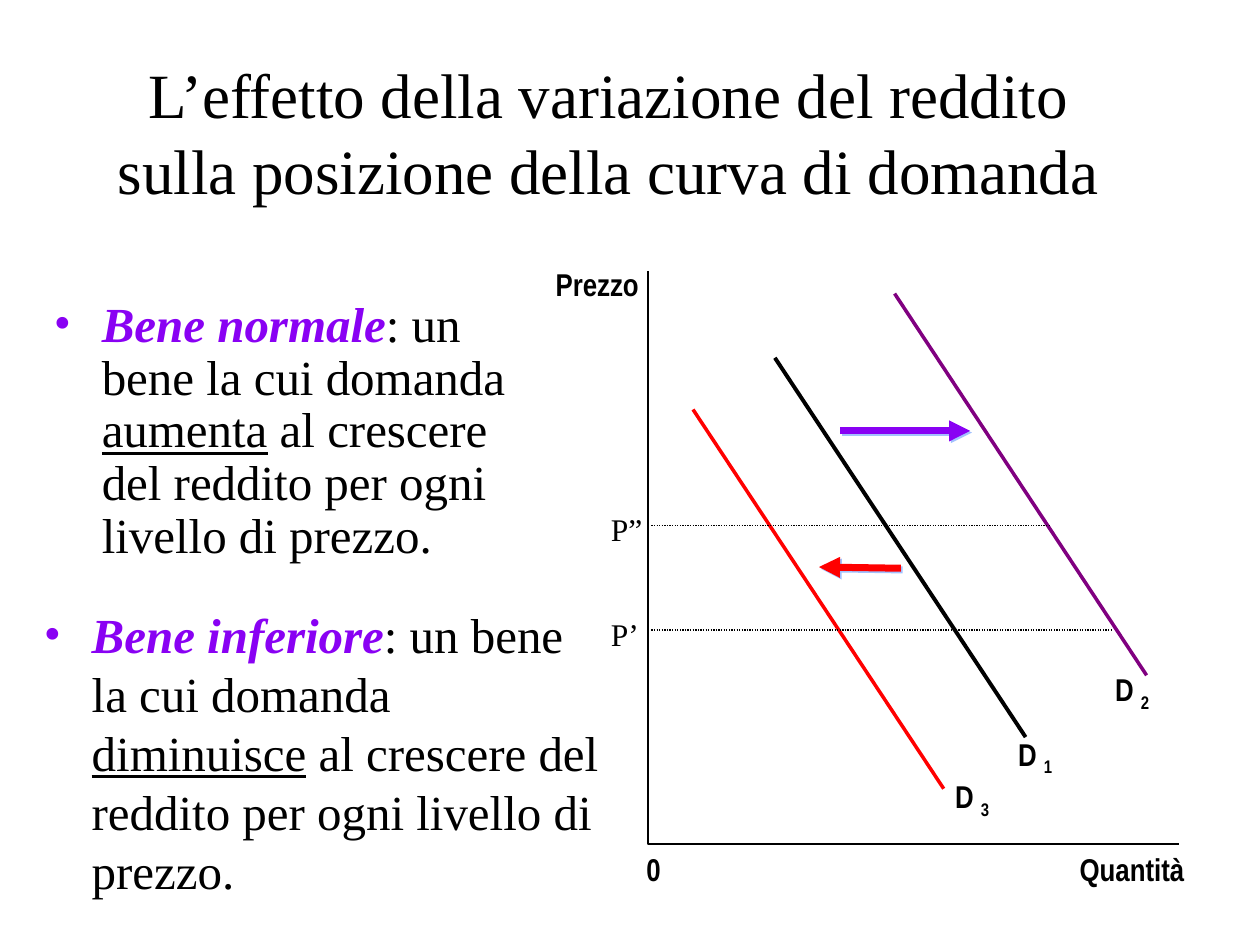
from lxml import etree
from pptx import Presentation, util as u
from pptx.dml.color import RGBColor
from pptx.enum import dml, shapes, text
from pptx.oxml.ns import qn

SERIF, SANS = "Times New Roman", "Arial Narrow"
BLACK, VIOLET, PURPLE, RED = "000000", "8901F3", "800080", "FF0000"
GLOW = "A2C1FE"
LEFT, MID, RIGHT = text.PP_ALIGN.LEFT, text.PP_ALIGN.CENTER, text.PP_ALIGN.RIGHT
PAD = (0.1, 0.05)

TITLE = "L’effetto della variazione del reddito sulla posizione della curva di domanda"
GOODS = [
    ((0.33, 2.33, 4.17, 2.08), 0.9, "Bene normale", "aumenta"),
    ((0.25, 4.75, 4.67, 2.42), None, "Bene inferiore", "diminuisce"),
]
AXES = [(5.14, 2.15), (5.14, 6.7), (9.36, 6.7)]
NAMES = [
    ("Prezzo", (4.35, 2.1, 0.72, 0.6), RIGHT),
    ("Quantità", (8.5, 6.75, 0.9, 0.3), RIGHT),
    ("0", (5.13, 6.75, 0.15, 0.3), LEFT),
]
CURVES = [
    ("1", (8.14, 5.85), (6.15, 2.84), BLACK, 2.25, (8.08, 5.83)),
    ("2", (9.1, 5.36), (7.1, 2.33), PURPLE, 2, (8.85, 5.32)),
    ("3", (7.49, 6.26), (5.5, 3.25), RED, 2, (7.58, 6.17)),
]
SHIFTS = [((6.67, 3.42), (7.7, 3.42), VIOLET), ((7.15, 4.51), (6.5, 4.5), RED)]
PRICES = [("P”", 4.17, 8.33, 0.5), ("P’", 5, 8.83, 0.42)]

deck = Presentation()
deck.slide_width, deck.slide_height = u.Inches(10), u.Inches(7.5)
slide = deck.slides.add_slide(deck.slide_layouts[6])


def paint(hue):
    return RGBColor.from_string(hue)


def node(top, tag, **attrs):
    return etree.SubElement(top, qn("a:" + tag), attrs)


def write(runs, box, size=18, font=SANS, align=LEFT, pad=(0, 0), wrap=False,
          mid=False, lead=None, bullet=False):
    frame = slide.shapes.add_textbox(*map(u.Inches, box)).text_frame
    frame.word_wrap = wrap
    frame.margin_left = frame.margin_right = u.Inches(pad[0])
    frame.margin_top = frame.margin_bottom = u.Inches(pad[1])
    frame.vertical_anchor = text.MSO_ANCHOR.MIDDLE if mid else text.MSO_ANCHOR.TOP
    para = frame.paragraphs[0]
    para.alignment = align
    if lead:
        para.line_spacing = lead
    if bullet:
        para.space_before = u.Pt(size * 0.2)
        props = para._p.get_or_add_pPr()
        props.set("marL", str(u.Inches(0.38)))
        props.set("indent", str(-u.Inches(0.38)))
        node(props, "buFont", typeface=font)
        node(props, "buChar", char="•")
    for words, look in runs:
        run = para.add_run()
        run.text = words
        face = run.font
        face.size, face.name = u.Pt(size), font
        face.color.rgb = paint(look.get("hue", BLACK))
        face.bold, face.italic = look.get("bold", False), look.get("slant", False)
        face.underline = look.get("under", False)
        if "base" in look:
            face._element.set("baseline", str(look["base"] * 1000))


def draw(start, end, hue, width, dots=False, arrow=False):
    line = slide.shapes.add_connector(
        shapes.MSO_CONNECTOR.STRAIGHT, *map(u.Inches, start + end))
    line.line.color.rgb, line.line.width = paint(hue), u.Pt(width)
    if dots:
        line.line.dash_style = dml.MSO_LINE.ROUND_DOT
    if arrow:
        node(line.line._get_or_add_ln(), "tailEnd", type="triangle")
    fx = node(line._element.spPr, "effectLst")
    if arrow:
        shade = node(fx, "outerShdw", blurRad="0", dist=str(u.Pt(1.4)),
                     dir=str(45 * 60000), algn="ctr", rotWithShape="0")
        node(shade, "srgbClr", val=GLOW)


write([(TITLE, {})], (0.58, 0.33, 8.5, 1.42), 36, SERIF, MID, PAD, True, True)

for box, lead, good, verb in GOODS:
    runs = [
        (good, dict(hue=VIOLET, bold=True, slant=True)),
        (": un bene la cui domanda ", {}),
        (verb, dict(under=True)),
        (" al crescere del reddito per ogni livello di prezzo.", {}),
    ]
    write(runs, box, 28, SERIF, pad=PAD, wrap=True, lead=lead, bullet=True)

pen = slide.shapes.build_freeform(*map(u.Inches, AXES[0]))
pen.add_line_segments([tuple(map(u.Inches, spot)) for spot in AXES[1:]], close=False)
axes = pen.convert_to_shape()
axes.shadow.inherit = False
axes.fill.background()
axes.line.color.rgb, axes.line.width = paint(BLACK), u.Pt(1)

for name, box, align in NAMES:
    write([(name, dict(bold=True))], box, align=align)

for num, start, end, hue, width, spot in CURVES:
    draw(start, end, hue, width)
    write([("D ", dict(bold=True)), (num, dict(bold=True, base=-25))],
          spot + (0.28, 0.3))

for start, end, hue in SHIFTS:
    draw(start, end, hue, 4, arrow=True)

for name, y, end, width in PRICES:
    draw((5.17, y), (end, y), BLACK, 0.75, dots=True)
    write([(name, {})], (4.75, y - 0.17, width, 0.4), font=SERIF, pad=PAD)

deck.save("out.pptx")
